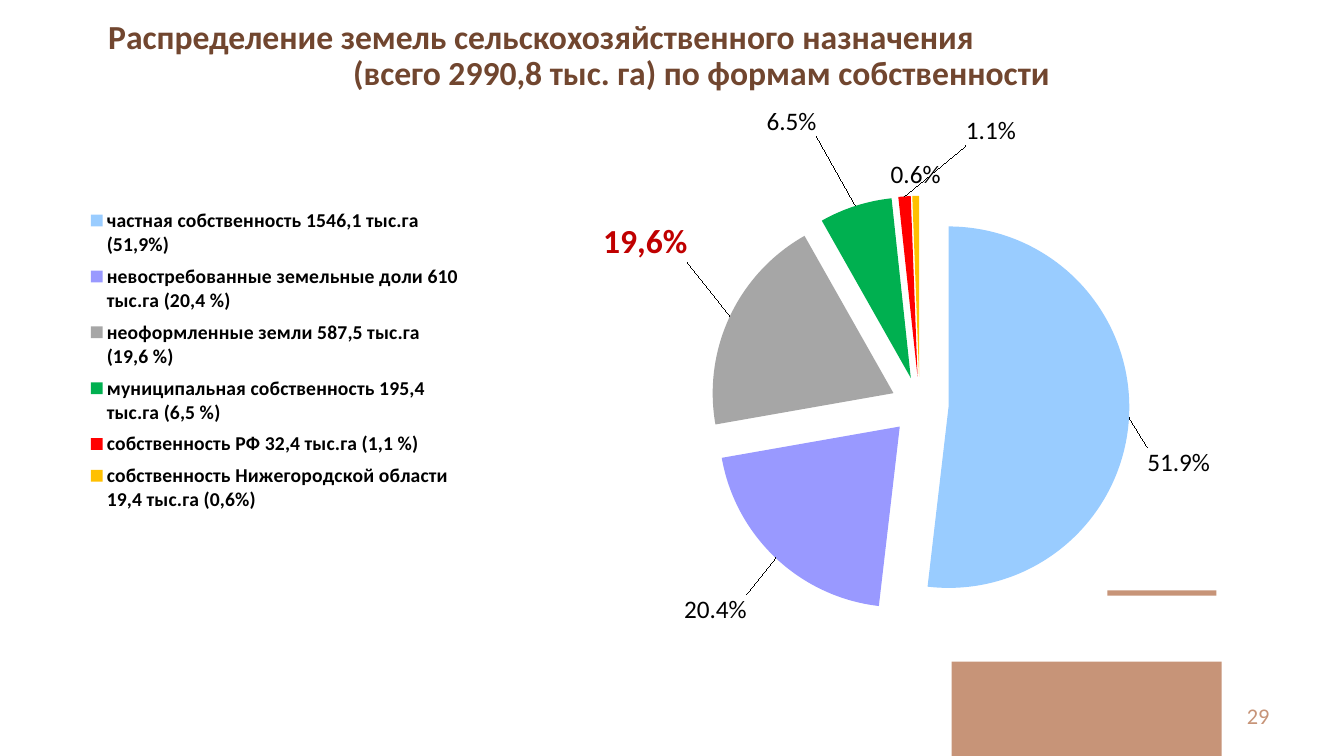
from lxml.etree import SubElement
from pptx import Presentation
from pptx.chart.data import CategoryChartData
from pptx.dml.color import RGBColor
from pptx.enum.chart import XL_CHART_TYPE as ChartType
from pptx.enum.chart import XL_LABEL_POSITION as LabelPosition
from pptx.enum.chart import XL_LEGEND_POSITION as LegendPosition
from pptx.enum.shapes import MSO_SHAPE as Preset
from pptx.enum.text import MSO_ANCHOR as Anchor
from pptx.enum.text import PP_ALIGN as Align
from pptx.oxml.ns import qn
from pptx.util import Inches, Pt

WIDTH, HEIGHT = 13.33, 7.5
FONT = "Calibri"
COLORS = {"title": "71462F", "accent": "C79478", "text": "000000", "highlight": "C00000"}

# Category, share, slice colour, label offset as a share of the chart
OWNERSHIP = [
    ("частная собственность 1546,1 тыс.га (51,9%)", 0.519, "99CCFF", (0.01, 0.07)),
    ("невостребованные земельные доли 610 тыс.га (20,4 %)", 0.204, "9999FF", (-0.02, 0.05)),
    ("неоформленные земли 587,5 тыс.га (19,6 %)", 0.196, "A6A6A6", (-0.03, -0.08)),
    ("муниципальная собственность 195,4 тыс.га (6,5 %)", 0.065, "00B050", (-0.03, -0.1)),
    ("собственность РФ 32,4 тыс.га (1,1 %)", 0.011, "FF0000", (0.07, -0.07)),
    ("собственность Нижегородской области 19,4 тыс.га (0,6%)", 0.006, "FFC000", None),
]
HIGHLIGHTED = 2


def box(left, top, width, height):
    """Turn shares of the slide into lengths."""
    return (Inches(left * WIDTH), Inches(top * HEIGHT),
            Inches(width * WIDTH), Inches(height * HEIGHT))


def format_font(font, size, color, bold=False):
    font.name, font.size, font.bold = FONT, Pt(size), bold
    font.color.rgb = RGBColor.from_string(color)


def add_bar(slide, place):
    shape = slide.shapes.add_shape(Preset.RECTANGLE, *box(*place))
    shape.shadow.inherit = False
    shape.fill.solid()
    shape.fill.fore_color.rgb = RGBColor.from_string(COLORS["accent"])
    shape.line.fill.background()


def add_title(slide, text, place, second_line_indent):
    title = slide.shapes.title
    title.left, title.top, title.width, title.height = box(*place)
    frame = title.text_frame
    frame.text = text
    frame.word_wrap = True
    frame.vertical_anchor = Anchor.TOP
    paragraph = frame.paragraphs[0]
    paragraph.alignment = Align.LEFT
    paragraph.line_spacing = 0.9
    # A hanging indent shifts the second line to the right
    indent = Inches(second_line_indent)
    properties = paragraph._p.get_or_add_pPr()
    properties.set("marL", str(indent))
    properties.set("indent", str(-indent))
    for run in paragraph.runs:
        format_font(run.font, 24, COLORS["title"], True)


def add_page_number(slide, number, place):
    frame = slide.shapes.add_textbox(*box(*place)).text_frame
    frame.text = number
    frame.word_wrap = True
    frame.vertical_anchor = Anchor.MIDDLE
    paragraph = frame.paragraphs[0]
    paragraph.alignment = Align.RIGHT
    format_font(paragraph.runs[0].font, 16, COLORS["accent"])


def set_layout(parent, after, **values):
    """Give a chart part a manual layout, placed behind the named child."""
    for old in parent.findall(qn("c:layout")):
        parent.remove(old)
    layout = SubElement(parent, qn("c:layout"))
    manual = SubElement(layout, qn("c:manualLayout"))
    for name, value in values.items():
        SubElement(manual, qn(f"c:{name}")).set("val", str(value))
    if after:
        parent.find(qn(after)).addnext(layout)
    else:
        parent.insert(0, layout)


def label_slice(point, offset, custom_text=None):
    label = point.data_label
    if custom_text:
        label.text_frame.text = custom_text
        run = label.text_frame.paragraphs[0].runs[0]
        format_font(run.font, 24, COLORS["highlight"], True)
    else:
        format_font(label.font, 18, COLORS["text"])
    label.position = LabelPosition.OUTSIDE_END
    element = point._ser.dLbls.findall(qn("c:dLbl"))[-1]
    set_layout(element, "c:idx", x=offset[0], y=offset[1])
    if not custom_text:
        number_format = SubElement(element, qn("c:numFmt"))
        number_format.set("formatCode", "0.0%")
        number_format.set("sourceLinked", "0")
        element.find(qn("c:layout")).addnext(number_format)


def add_pie(slide, place):
    data = CategoryChartData(number_format="0.0%")
    data.categories = [row[0] for row in OWNERSHIP]
    data.add_series("Series 1", [row[1] for row in OWNERSHIP])
    chart = slide.shapes.add_chart(ChartType.PIE, *box(*place), data).chart
    chart.has_title = False
    format_font(chart.font, 18, COLORS["text"])

    # Legend on the left, pie on the right
    chart.has_legend = True
    legend = chart.legend
    legend.position = LegendPosition.RIGHT
    legend.include_in_layout = True
    format_font(legend.font, 14, COLORS["text"], True)
    set_layout(legend._element, "c:legendPos", xMode="edge", yMode="edge",
               x=0.04, y=0.16, w=0.3, h=0.5)
    set_layout(chart._chartSpace.chart.plotArea, None, layoutTarget="inner",
               xMode="edge", yMode="edge", x=0.472, y=0.152, w=0.476, h=0.658)

    # Labels for all slices
    plot = chart.plots[0]
    plot.vary_by_categories = True
    series = plot.series[0]
    labels = series.data_labels
    labels.show_value = True
    labels.number_format = "0.0%"
    labels.number_format_is_linked = False
    labels.position = LabelPosition.OUTSIDE_END
    format_font(labels.font, 18, COLORS["text"])
    leader = labels._element.find(qn("c:showLeaderLines"))
    if leader is None:
        leader = SubElement(labels._element, qn("c:showLeaderLines"))
    leader.set("val", "1")

    # Slices pulled apart, each in its own colour
    explosion = SubElement(series._element, qn("c:explosion"))
    explosion.set("val", "16")
    series._element.find(qn("c:tx")).addnext(explosion)
    for index, (_, _, color, offset) in enumerate(OWNERSHIP):
        point = series.points[index]
        point.format.fill.solid()
        point.format.fill.fore_color.rgb = RGBColor.from_string(color)
        if offset:
            label_slice(point, offset, "19,6%" if index == HIGHLIGHTED else None)


def main():
    presentation = Presentation()
    presentation.slide_width = Inches(WIDTH)
    presentation.slide_height = Inches(HEIGHT)
    slide = presentation.slides.add_slide(presentation.slide_layouts[5])

    # Decorative bars
    add_bar(slide, (0.708, 0.875, 0.201, 0.125))
    add_bar(slide, (0.824, 0.781, 0.081, 0.007))

    # Title, page number and chart
    add_title(slide, "Распределение земель сельскохозяйственного назначения\v"
              "(всего 2990,8 тыс. га) по формам собственности",
              (0.073, 0.02, 0.871, 0.131), 2.43)
    add_page_number(slide, "29", (0.727, 0.92, 0.225, 0.053))
    add_pie(slide, (0.029, 0.131, 0.923, 0.843))
    presentation.save("out.pptx")


if __name__ == "__main__":
    main()
